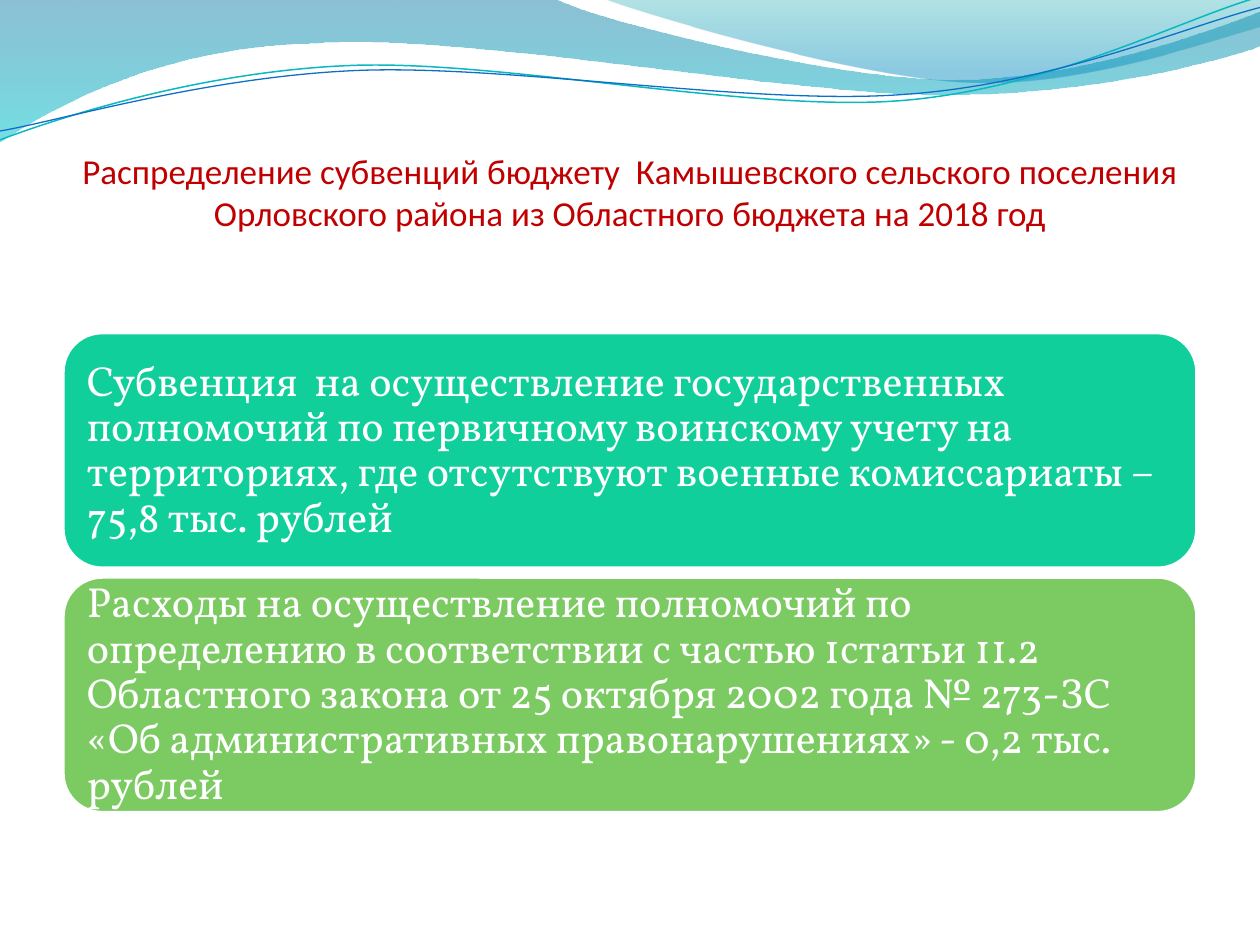
"""Build a slide on budget subventions with a wave header and two cards."""
from math import cos, radians, sin

from lxml import etree
from pptx import Presentation
from pptx.dml.color import RGBColor
from pptx.enum.shapes import MSO_SHAPE
from pptx.enum.text import MSO_ANCHOR, MSO_AUTO_SIZE, PP_ALIGN
from pptx.oxml.ns import qn
from pptx.util import Inches, Pt

ROUNDED = MSO_SHAPE.ROUNDED_RECTANGLE
MIDDLE, BOTTOM = MSO_ANCHOR.MIDDLE, MSO_ANCHOR.BOTTOM
LEFT, CENTER = PP_ALIGN.LEFT, PP_ALIGN.CENTER
NO_AUTOFIT = MSO_AUTO_SIZE.NONE

COLORS = {
    "red": "C00000", "white": "FFFFFF", "mint": "10CF9B", "green": "7CCA62",
    "deep": "0074A1", "cyan": "00C6CF", "teal": "00A1A9", "azure": "008BBF",
    "teal line": "0AB8BF", "blue line": "0F6FC6",
}
TITLE = ("Распределение субвенций бюджету  Камышевского сельского поселения "
         "Орловского района из Областного бюджета на 2018 год")
CARDS = [
    ("mint", "Субвенция  на осуществление государственных полномочий по первичному "
             "воинскому учету на территориях, где отсутствуют военные комиссариаты – "
             "75,8 тыс. рублей"),
    ("green", "Расходы на осуществление полномочий по определению в соответствии с "
              "частью 1статьи 11.2 Областного закона от 25 октября 2002 года "
              "№ 273-ЗС «Об административных правонарушениях» - 0,2 тыс. рублей"),
]
# Each segment holds one point (straight) or three points (cubic curve).
BANDS = [
    {"start": (0, 0),
     "segments": [[(4.4, -0.01)],
                  [(4.76, 0.17), (6.64, 0.63), (7.58, 0.63)],
                  [(8.53, 0.63), (9.58, 0.26), (10, 0.09)],
                  [(10.01, 0.36)],
                  [(9.83, 0.44), (8.7, 0.76), (7.46, 0.75)],
                  [(6.22, 0.75), (3.82, 0.28), (2.57, 0.34)],
                  [(1.29, 0.36), (0.46, 0.83), (-0.01, 1.13)],
                  [(0, 0)]],
     "stops": [(0, "deep", 45), (100, "cyan", 55)]},
    {"start": (4.79, -0.01),
     "segments": [[(5.09, 0.11), (6.82, 0.62), (7.69, 0.65)],
                  [(8.56, 0.69), (9.61, 0.32), (10, 0.21)],
                  [(10, 0)],
                  [(4.79, -0.01)]],
     "stops": [(0, "teal", 30), (80, "azure", 45)]},
]
WAVES = [
    {"start": (0, 1.11), "center": (4.99, 0.58), "color": "teal line", "width": 0.85,
     "segments": [[(0.48, 0.93), (1.58, 0.57), (2.77, 0.52)],
                  [(3.95, 0.47), (5.93, 0.89), (7.13, 0.8)],
                  [(8.33, 0.71), (9.38, 0.15), (9.98, -0.02)]]},
    {"start": (0, 1.04), "center": (5, 0.59), "color": "blue line", "width": 0.75,
     "segments": [[(0.47, 0.96), (1.64, 0.61), (2.83, 0.56)],
                  [(4.03, 0.51), (5.97, 0.84), (7.17, 0.75)],
                  [(8.36, 0.67), (9.41, 0.21), (10, 0.06)]]},
]
WAVE_TILT = 2.7
CARD_TOP, CARD_HEIGHT, CARD_GAP, CARD_INSET = 2.64, 1.87, 0.07, 0.09
MARGIN, CONTENT_WIDTH = 0.5, 9


def rgb(name):
    return RGBColor.from_string(COLORS[name])


def level(point, center):
    angle = radians(WAVE_TILT)
    across, down = point[0] - center[0], point[1] - center[1]
    return (center[0] + across * cos(angle) - down * sin(angle),
            center[1] + across * sin(angle) + down * cos(angle))


def add_outline(page, start, segments, close):
    builder = page.shapes.build_freeform(Inches(start[0]), Inches(start[1]))
    builder.add_line_segments([(Inches(x), Inches(y)) for segment in segments
                               for x, y in segment], close=close)
    shape = builder.convert_to_shape()
    shape.shadow.inherit = False
    steps = iter(list(shape._element.spPr.iter(qn("a:lnTo"))))
    for segment in segments:
        group = [next(steps) for _ in segment]
        if len(group) == 3:
            curve = etree.Element(qn("a:cubicBezTo"))
            group[0].addprevious(curve)
            for step in group:
                curve.append(step[0])
                step.getparent().remove(step)
    return shape


def fill_gradient(shape, stops):
    shape.fill.gradient()
    shape.fill.gradient_angle = 270
    stop_list = shape._element.spPr.find(qn("a:gradFill")).find(qn("a:gsLst"))
    for old in list(stop_list):
        stop_list.remove(old)
    for position, color, opacity in stops:
        stop = etree.SubElement(stop_list, qn("a:gs"), pos=str(position * 1000))
        tint = etree.SubElement(stop, qn("a:srgbClr"), val=COLORS[color])
        etree.SubElement(tint, qn("a:alpha"), val=str(opacity * 1000))


def write(shape, text, *, font, size, color, align, anchor, insets, spacing=1.0):
    frame = shape.text_frame
    frame.word_wrap = True
    frame.auto_size = NO_AUTOFIT
    frame.vertical_anchor = anchor
    (frame.margin_left, frame.margin_top,
     frame.margin_right, frame.margin_bottom) = map(Inches, insets)
    para = frame.paragraphs[0]
    para.alignment = align
    para.line_spacing = spacing
    span = para.add_run()
    span.text = text
    span.font.name = font
    span.font.size = Pt(size)
    span.font.color.rgb = rgb(color)


def main():
    deck = Presentation()
    deck.slide_width, deck.slide_height = Inches(10), Inches(7.5)
    page = deck.slides.add_slide(deck.slide_layouts[5])

    for band in BANDS:
        shape = add_outline(page, band["start"], band["segments"], True)
        fill_gradient(shape, band["stops"])
        shape.line.fill.background()
    for wave in WAVES:
        center = wave["center"]
        segments = [[level(point, center) for point in segment]
                    for segment in wave["segments"]]
        shape = add_outline(page, level(wave["start"], center), segments, False)
        shape.rotation = 360 - WAVE_TILT
        shape.fill.background()
        shape.line.color.rgb = rgb(wave["color"])
        shape.line.width = Pt(wave["width"])

    title = page.shapes.title
    title.left, title.top = Inches(MARGIN), Inches(0.3)
    title.width, title.height = Inches(CONTENT_WIDTH), Inches(1.89)
    write(title, TITLE, font="Calibri", size=20, color="red", align=CENTER,
          anchor=BOTTOM, insets=(0, 0.04, 0, 0.34))

    for index, (color, text) in enumerate(CARDS):
        top = CARD_TOP + index * (CARD_HEIGHT + CARD_GAP)
        card = page.shapes.add_shape(ROUNDED, Inches(MARGIN), Inches(top),
                                     Inches(CONTENT_WIDTH), Inches(CARD_HEIGHT))
        card.shadow.inherit = False
        card.fill.solid()
        card.fill.fore_color.rgb = rgb(color)
        card.line.color.rgb = rgb("white")
        card.line.width = Pt(2)
        box = page.shapes.add_textbox(Inches(MARGIN + CARD_INSET), Inches(top + CARD_INSET),
                                      Inches(CONTENT_WIDTH - 2 * CARD_INSET),
                                      Inches(CARD_HEIGHT - 2 * CARD_INSET))
        write(box, text, font="Vollkorn", size=24, color="white", align=LEFT,
              anchor=MIDDLE, insets=(0.1, 0.1, 0.1, 0.1), spacing=0.9)

    deck.save("out.pptx")


if __name__ == "__main__":
    main()
